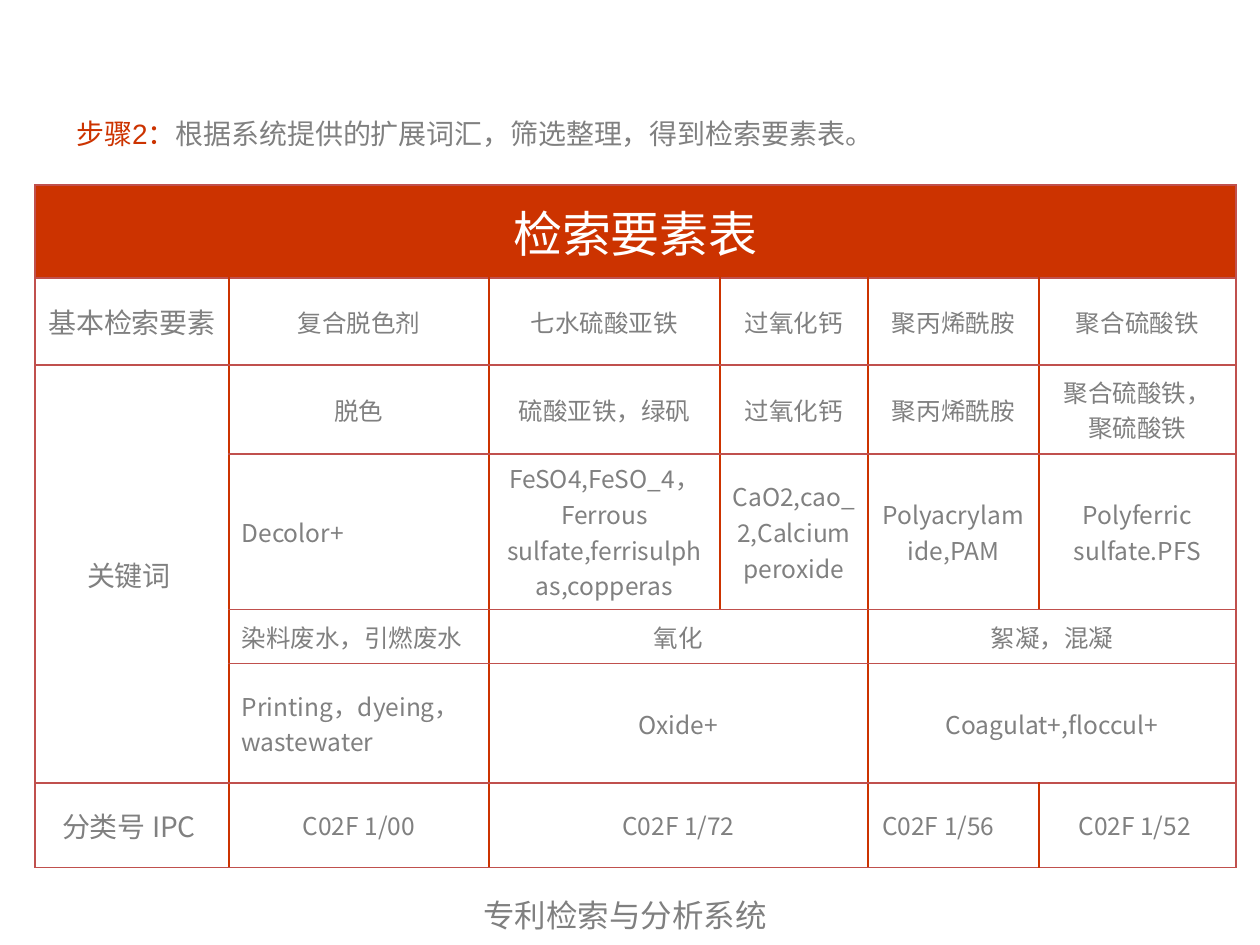
from lxml import etree
from pptx import Presentation
from pptx import util as u
from pptx.dml.color import RGBColor
from pptx.enum import text
from pptx.oxml import ns

SCALE = 914400 / 126  # EMU in one px
RED, EDGE, GREY, WHITE = "CC3300", "C0504D", "808080", "FFFFFF"
NOTO, CALIBRI, ARIAL = "Noto Sans CJK SC", "Calibri", "Arial"
PLAIN = "{2D5ABB26-0587-4C30-8999-92F81FD0307C}"  # table style without grid

COLS = [194, 260, 231, 148, 171, 197]
ROWS = [93, 87, 89, 135, 54, 87, 71]
# None marks a place covered by a merged cell
CELLS = [
    ["检索要素表", None, None, None, None, None],
    ["基本检索要素 ", "复合脱色剂", "七水硫酸亚铁", "过氧化钙", "聚丙烯酰胺", "聚合硫酸铁"],
    ["关键词 ", "脱色", "硫酸亚铁，绿矾", "过氧化钙", "聚丙烯酰胺", "聚合硫酸铁，聚硫酸铁"],
    [None, "Decolor+", "FeSO4,FeSO_4，Ferrous sulfate,ferrisulphas,copperas",
     "CaO2,cao_2,Calcium peroxide", "Polyacrylamide,PAM", "Polyferric sulfate.PFS"],
    [None, "染料废水，引燃废水", "氧化", None, "絮凝，混凝", None],
    [None, "Printing，dyeing，wastewater", "Oxide+", None, "Coagulat+,floccul+", None],
    ["分类号 IPC ", "C02F 1/00", "C02F 1/72", None, "C02F 1/56 　", "C02F 1/52 "],
]
# (row, column): rows and columns covered
SPANS = {(0, 0): (1, 6), (2, 0): (4, 1), (4, 2): (1, 2), (4, 4): (1, 2),
         (5, 2): (1, 2), (5, 4): (1, 2), (6, 2): (1, 2)}
LATIN = (3, 5, 6)  # rows with Latin wording
LEFT = {(3, 1), (4, 1), (5, 1)}  # cells set flush left


def px(n):
    return u.Emu(round(n * SCALE))


def color(code):
    return RGBColor.from_string(code)


def style(run, size, face, code):
    font = run.font
    font.size, font.name = u.Pt(size), face
    font.color.rgb = color(code)
    east = etree.SubElement(run._r.get_or_add_rPr(), ns.qn("a:ea"))
    east.set("typeface", NOTO)


def border(cell, side, code):
    line = etree.SubElement(cell._tc.get_or_add_tcPr(), ns.qn("a:ln" + side), w="12700")
    fill = etree.SubElement(line, ns.qn("a:solidFill"))
    etree.SubElement(fill, ns.qn("a:srgbClr"), val=code)


def label(slide, box, runs, size):
    frame = slide.shapes.add_textbox(*map(px, box)).text_frame
    frame.word_wrap = True
    para = frame.paragraphs[0]
    for words, face, code in runs:
        run = para.add_run()
        run.text = words
        style(run, size, face, code)
    return frame


def fill_cell(cell, row, col, words):
    head = row == 0
    first, last = col == 0, col + SPANS.get((row, col), (1, 1))[1] == len(COLS)
    # Outer edges and level lines share one colour, inner upright lines another
    for side, code in (("L", EDGE if first else RED), ("R", EDGE if last else RED),
                       ("T", EDGE), ("B", EDGE)):
        border(cell, side, code)
    if head:
        cell.fill.solid()
        cell.fill.fore_color.rgb = color(RED)
    else:
        cell.fill.background()

    cell.vertical_anchor = text.MSO_ANCHOR.MIDDLE
    para = cell.text_frame.paragraphs[0]
    para.text = words
    flush = (row, col) in LEFT
    para.alignment = text.PP_ALIGN.LEFT if flush else text.PP_ALIGN.CENTER
    if flush and row in LATIN:
        para.space_before = u.Pt(2.8)
    size = 28 if head else 16 if first else 14
    face = NOTO if row in LATIN or (first and not head) else CALIBRI
    style(para.runs[0], size, face, WHITE if head else GREY)


def grid(slide, left, top):
    frame = slide.shapes.add_table(len(ROWS), len(COLS), px(left), px(top),
                                   px(sum(COLS)), px(sum(ROWS)))
    table = frame.table
    table._tbl.tblPr.find(ns.qn("a:tableStyleId")).text = PLAIN
    for col, wide in zip(table.columns, COLS):
        col.width = px(wide)
    for row, high in zip(table.rows, ROWS):
        row.height = px(high)
    for (row, col), (down, across) in SPANS.items():
        table.cell(row, col).merge(table.cell(row + down - 1, col + across - 1))
    for row, line in enumerate(CELLS):
        for col, words in enumerate(line):
            if words:
                fill_cell(table.cell(row, col), row, col, words)


def main():
    deck = Presentation()
    deck.slide_width, deck.slide_height = px(1260), px(945)
    slide = deck.slides.add_slide(deck.slide_layouts[6])

    # Table of search elements
    grid(slide, 35, 185)

    # Step line above the table
    step = label(slide, (64, 76, 1032, 84), [
        ("步骤2：", ARIAL, RED),
        ("根据系统提供的扩展词汇，筛选整理，得到检索要素表。", CALIBRI, GREY)], 16)
    step.vertical_anchor = text.MSO_ANCHOR.MIDDLE
    step.paragraphs[0].line_spacing = 1.9

    # System name at the foot
    label(slide, (471, 890, 333, 50), [("专利检索与分析系统", ARIAL, GREY)], 18)

    deck.save("out.pptx")


if __name__ == "__main__":
    main()
